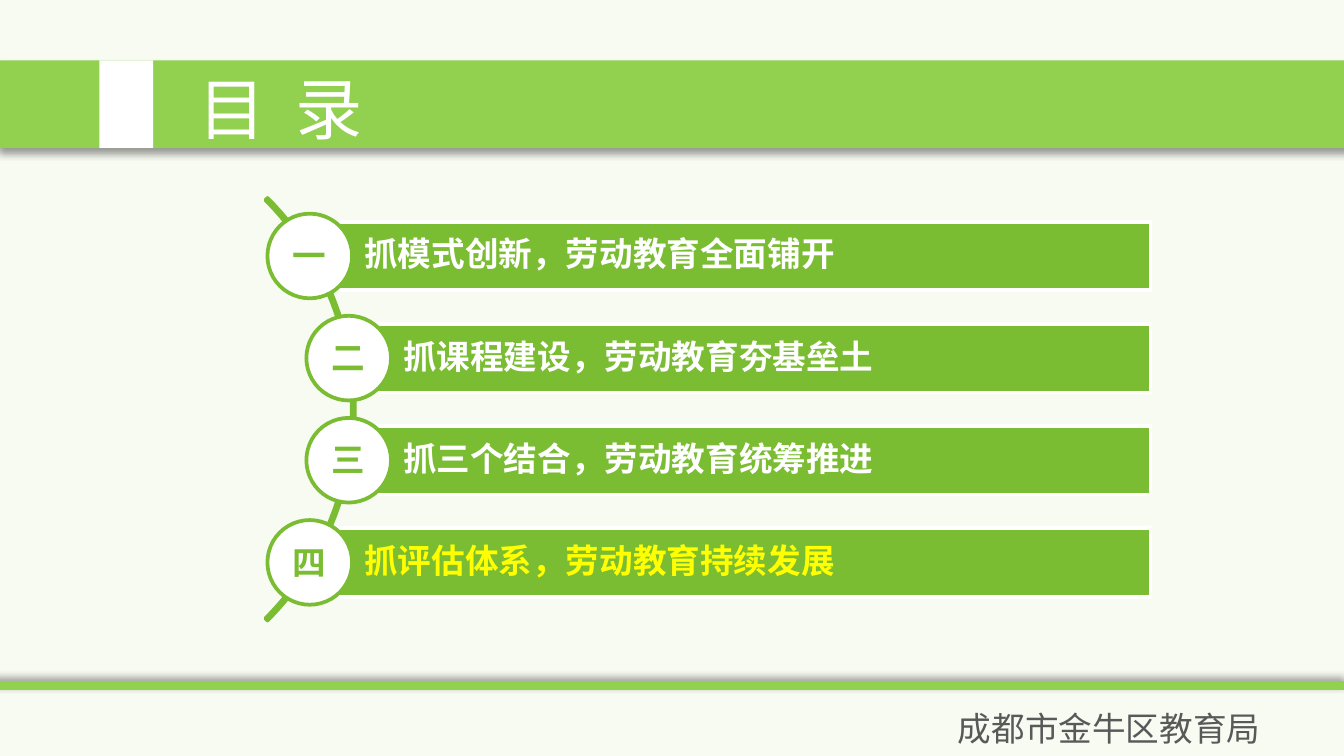
from dataclasses import dataclass

from lxml.etree import SubElement
from pptx import Presentation
from pptx.dml.color import RGBColor
from pptx.enum.shapes import MSO_CONNECTOR, MSO_SHAPE
from pptx.enum.text import MSO_ANCHOR, MSO_AUTO_SIZE, PP_ALIGN
from pptx.oxml.ns import qn
from pptx.util import Inches, Pt

COLORS = {
    "paper": "F8FBF2",
    "band": "92D050",
    "leaf": "7ABC32",
    "white": "FFFFFF",
    "highlight": "FFFF00",
    "footer": "595959",
    "shadow": "000000",
}
SANS = "Noto Sans CJK SC"
TITLE_FONT = "Noto Sans CJK JP"
BAR_RIGHT, BAR_HEIGHT = 8.56, 0.51
FIRST_TOP, ROW_STEP = 1.65, 0.76
CIRCLE = 0.63


@dataclass
class Topic:
    number: str
    text: str
    left: float
    color: str = "white"


TOPICS = [
    Topic("一", "抓模式创新，劳动教育全面铺开", 2.31),
    Topic("二", "抓课程建设，劳动教育夯基垒土", 2.6),
    Topic("三", "抓三个结合，劳动教育统筹推进", 2.6),
    Topic("四", "抓评估体系，劳动教育持续发展", 2.31, "highlight"),
]


def rgb(name: str) -> RGBColor:
    return RGBColor.from_string(COLORS[name])


def paint(sp, fill: str, line: str | None = None) -> None:
    sp.shadow.inherit = False
    sp.fill.solid()
    sp.fill.fore_color.rgb = rgb(fill)
    if line:
        sp.line.color.rgb = rgb(line)
        sp.line.width = Pt(2)
    else:
        sp.line.fill.background()


def add_shape(shapes, kind, x: float, y: float, w: float, h: float,
              fill: str, line: str | None = None):
    sp = shapes.add_shape(kind, Inches(x), Inches(y), Inches(w), Inches(h))
    paint(sp, fill, line)
    return sp


def set_shadow(sp, degrees: int) -> None:
    """Give the shape a soft outer shadow cast in the given direction."""
    spPr = sp._element.spPr
    for old in spPr.findall(qn("a:effectLst")):
        spPr.remove(old)
    effects = SubElement(spPr, qn("a:effectLst"))
    shadow = SubElement(effects, qn("a:outerShdw"), blurRad=str(Pt(4)),
                        dist=str(Pt(3)), dir=str(degrees * 60000),
                        algn="t", rotWithShape="0")
    color = SubElement(shadow, qn("a:srgbClr"), val=COLORS["shadow"])
    SubElement(color, qn("a:alpha"), val="40000")


def format_run(r, size: float, color: str, font: str = SANS, bold: bool = False) -> None:
    """Style a run, naming the font for Latin and East Asian text alike."""
    r.font.size = Pt(size)
    r.font.bold = bold
    r.font.color.rgb = rgb(color)
    r.font.name = font
    SubElement(r._r.get_or_add_rPr(), qn("a:ea"), typeface=font)


def add_label(shapes, x: float, y: float, w: float, h: float, texts: list[str],
              size: float, color: str, font: str = SANS, bold: bool = False):
    """Add a one-line text box with one run for each text."""
    sp = shapes.add_textbox(Inches(x), Inches(y), Inches(w), Inches(h))
    tf = sp.text_frame
    tf.word_wrap = False
    tf.auto_size = MSO_AUTO_SIZE.SHAPE_TO_FIT_TEXT
    for text in texts:
        r = tf.paragraphs[0].add_run()
        r.text = text
        format_run(r, size, color, font, bold)
    return sp


def add_frame(s) -> None:
    band = add_shape(s.shapes, MSO_SHAPE.RECTANGLE, -0.01, 0.45, 10.05, 0.65, "band")
    set_shadow(band, 90)
    add_shape(s.shapes, MSO_SHAPE.RECTANGLE, 0.74, 0.45, 0.4, 0.65, "white")
    rule = s.shapes.add_connector(MSO_CONNECTOR.STRAIGHT, Inches(-0.02), Inches(5.1),
                                  Inches(10.02), Inches(5.1))
    rule.line.color.rgb = rgb("band")
    rule.line.width = Pt(4.5)
    set_shadow(rule, 225)
    add_label(s.shapes, 7.03, 5.22, 2.47, 0.4, ["成都市金牛区教育局"], 18, "footer")
    title = add_label(s.shapes, 1.38, 0.45, 1.52, 0.71, ["目 ", "录"], 36,
                      "white", TITLE_FONT)
    # Letter spacing widens the gap between the two characters
    title.text_frame.paragraphs[0].runs[0]._r.get_or_add_rPr().set("spc", "400")


def add_bar(s, topic: Topic, top: float) -> None:
    left, right = Inches(topic.left), Inches(BAR_RIGHT)
    y1, y2 = Inches(top), Inches(top + BAR_HEIGHT)
    builder = s.shapes.build_freeform(left, y1)
    builder.add_line_segments([(right, y1), (right, y2), (left, y2)], close=True)
    sp = builder.convert_to_shape()
    paint(sp, "leaf", "white")
    tf = sp.text_frame
    tf.word_wrap = True
    tf.vertical_anchor = MSO_ANCHOR.MIDDLE
    tf.margin_left = Inches(0.4)
    tf.margin_top = tf.margin_right = tf.margin_bottom = Inches(0.05)
    p = tf.paragraphs[0]
    p.text = topic.text
    p.alignment = PP_ALIGN.LEFT
    p.line_spacing = 0.9
    format_run(p.runs[0], 18, topic.color, bold=True)


def add_number(s, topic: Topic, top: float) -> None:
    shapes = s.shapes.add_group_shape().shapes
    x, y = topic.left - 0.32, top - 0.06
    add_shape(shapes, MSO_SHAPE.OVAL, x, y, CIRCLE, CIRCLE, "white", "leaf")
    add_label(shapes, x + 0.09, y + 0.11, 0.45, 0.4, [topic.number], 18, "leaf", bold=True)


def main() -> None:
    prs = Presentation()
    prs.slide_width = Inches(10)
    prs.slide_height = prs.slide_width * 9 // 16
    s = prs.slides.add_slide(prs.slide_layouts[6])
    s.background.fill.solid()
    s.background.fill.fore_color.rgb = rgb("paper")
    add_frame(s)

    arc = add_shape(s.shapes, MSO_SHAPE.BLOCK_ARC, -1.8, 0.82, 4.44, 4.45, "leaf", "leaf")
    for i, value in enumerate((189, 27, 0.005)):
        arc.adjustments[i] = value

    rows = [(topic, FIRST_TOP + i * ROW_STEP) for i, topic in enumerate(TOPICS)]
    for topic, top in rows:
        add_bar(s, topic, top)
    for topic, top in rows:
        add_number(s, topic, top)
    prs.save("out.pptx")


if __name__ == "__main__":
    main()
